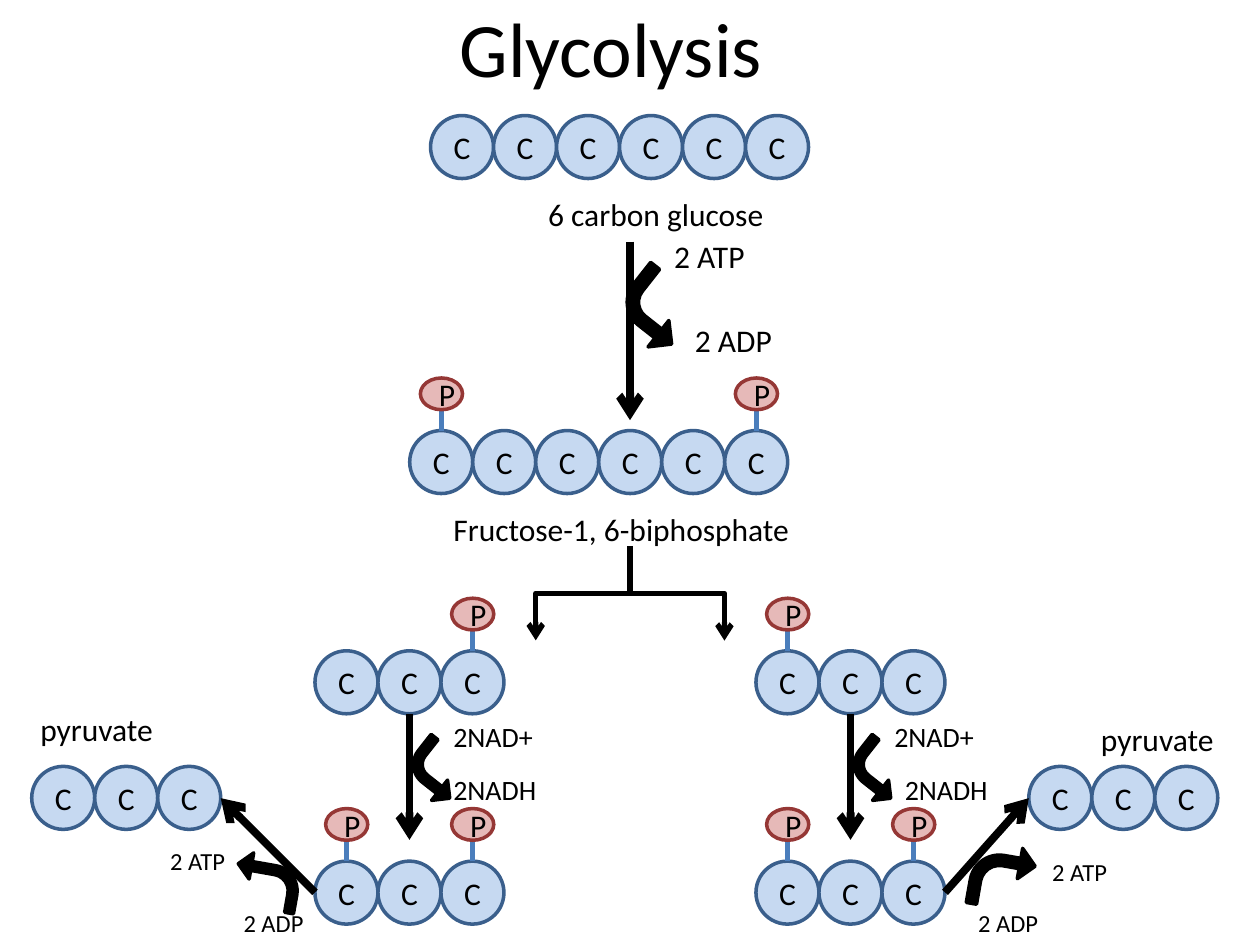
from lxml.etree import SubElement
from pptx import Presentation
from pptx.dml.color import RGBColor
from pptx.enum.shapes import MSO_CONNECTOR, MSO_SHAPE
from pptx.enum.text import MSO_ANCHOR, MSO_AUTO_SIZE, PP_ALIGN
from pptx.oxml.ns import qn
from pptx.util import Cm, Pt


def color(value):
    return RGBColor.from_string(value)


class PathwaySlide:
    FONT = "Calibri"
    INK = "000000"
    CARBON = ("C6D9F1", "3A5F8C")
    PHOSPHATE = ("E6B9B8", "953735")
    BOND = "4B7EBC"
    ATOM = 1.27

    def __init__(self, deck):
        self.slide = deck.slides.add_slide(deck.slide_layouts[5])

    def add_words(self, frame, words, size, align):
        paragraph = frame.paragraphs[0]
        paragraph.alignment = align
        run = paragraph.add_run()
        run.text = words
        run.font.name = self.FONT
        run.font.size = Pt(size)
        run.font.color.rgb = color(self.INK)

    def title(self, words, left, top, width, height):
        heading = self.slide.shapes.title
        heading.left, heading.top = Cm(left), Cm(top)
        heading.width, heading.height = Cm(width), Cm(height)
        heading.text_frame.vertical_anchor = MSO_ANCHOR.MIDDLE
        self.add_words(heading.text_frame, words, 44, PP_ALIGN.CENTER)

    def label(self, words, left, top, width, height=1.02, size=18):
        box = self.slide.shapes.add_textbox(Cm(left), Cm(top), Cm(width), Cm(height))
        box.text_frame.word_wrap = True
        box.text_frame.auto_size = MSO_AUTO_SIZE.SHAPE_TO_FIT_TEXT
        self.add_words(box.text_frame, words, size, PP_ALIGN.LEFT)

    def shape(self, preset, left, top, width, height, fill, outline):
        shape = self.slide.shapes.add_shape(preset, Cm(left), Cm(top), Cm(width), Cm(height))
        shape.shadow.inherit = False
        shape.fill.solid()
        shape.fill.fore_color.rgb = color(fill)
        shape.line.color.rgb = color(outline)
        shape.line.width = Pt(2)
        return shape

    def atom(self, symbol, left, top, width, height, colors):
        atom = self.shape(MSO_SHAPE.OVAL, left, top, width, height, *colors)
        atom.text_frame.vertical_anchor = MSO_ANCHOR.MIDDLE
        self.add_words(atom.text_frame, symbol, 18, PP_ALIGN.CENTER)

    def molecule(self, left, top, carbons, phosphates=()):
        for index in range(carbons):
            self.atom("C", left + index * self.ATOM, top, self.ATOM, self.ATOM, self.CARBON)
        for index in phosphates:
            center = left + (index + 0.5) * self.ATOM
            self.line(center, top, center, top - 0.42, 3, self.BOND, head=False)
            self.atom("P", center - 0.42, top - 1.06, 0.85, 0.64, self.PHOSPHATE)

    def line(self, x1, y1, x2, y2, width=4.5, ink=INK, head=True, kind=MSO_CONNECTOR.STRAIGHT):
        line = self.slide.shapes.add_connector(kind, Cm(x1), Cm(y1), Cm(x2), Cm(y2))
        line.line.color.rgb = color(ink)
        line.line.width = Pt(width)
        properties = line._element.spPr
        if head:
            SubElement(properties.find(qn("a:ln")), qn("a:tailEnd"), type="arrow")
        SubElement(properties, qn("a:effectLst"))
        return line

    def branch(self, center, top, side, bottom):
        branch = self.line(side, top, center, bottom, 3, kind=MSO_CONNECTOR.ELBOW)
        degrees = 270 if side > center else 90
        branch._element.spPr.find(qn("a:xfrm")).set("rot", str(degrees * 60000))

    def curve(self, left, top, width, height, rotation, bend, flip=None):
        curve = self.shape(MSO_SHAPE.BENT_ARROW, left, top, width, height, self.INK, self.INK)
        for index, value in enumerate((0.169, 0.25, 0.25, bend)):
            curve.adjustments[index] = value
        curve.rotation = rotation
        if flip:
            curve._element.spPr.find(qn("a:xfrm")).set(flip, "1")


def main():
    deck = Presentation()
    deck.slide_width, deck.slide_height = Cm(25.4), Cm(19.05)
    pathway = PathwaySlide(deck)
    pathway.title("Glycolysis ", 1.06, -0.64, 22.86, 3.18)

    pathway.molecule(8.68, 2.33, 6)
    pathway.label("6 carbon glucose", 10.8, 3.81, 4.87)
    pathway.line(12.7, 4.87, 12.7, 8.47)
    pathway.curve(12.55, 5.56, 1.35, 1.37, 38.2, 0.432, "flipV")
    pathway.label("2 ATP", 13.34, 4.66, 2.54)
    pathway.label("2 ADP", 13.76, 6.35, 2.54)

    pathway.molecule(8.26, 8.68, 6, (0, 5))
    pathway.label("Fructose-1, 6-biphosphate", 8.89, 10.16, 7.62)
    for side in (14.61, 10.8):
        pathway.branch(12.7, 11.01, side, 12.91)

    for left, phosphate, nadh_left in ((6.35, 2, 8.89), (15.24, 0, 17.99)):
        center = left + 1.5 * pathway.ATOM
        pathway.molecule(left, 13.12, 3, (phosphate,))
        pathway.line(center, 14.39, center, 16.93)
        pathway.curve(center, 15.03, 1.09, 1.04, 38.2, 0.432, "flipV")
        pathway.label("2NAD+", left + 2 * pathway.ATOM, 14.39, 2.54, 0.94, 16)
        pathway.label("2NADH", nadh_left, 15.45, 2.54, 0.94, 16)
        pathway.molecule(left, 17.36, 3, (0, 2))

    for left, start, end in ((0.64, 6.35, 4.45), (20.74, 19.05, 20.74)):
        pathway.molecule(left, 15.45, 3)
        pathway.line(start, 17.99, end, 16.09)
    pathway.curve(4.75, 17.25, 1.27, 1.07, 10, 0.479, "flipH")
    pathway.curve(19.58, 17.04, 1.24, 1.27, 10, 0.479)

    for adp_left, atp_left, atp_top, pyruvate_left, pyruvate_top in (
        (4.66, 3.18, 16.93, 0.42, 14.18),
        (19.47, 20.96, 17.15, 21.8, 14.39),
    ):
        pathway.label("2 ADP", adp_left, 18.19, 2.75, 0.85, 14)
        pathway.label("2 ATP", atp_left, atp_top, 1.69, 0.85, 14)
        pathway.label(" pyruvate", pyruvate_left, pyruvate_top, 4.45, 1.06)

    deck.save("out.pptx")


if __name__ == "__main__":
    main()
